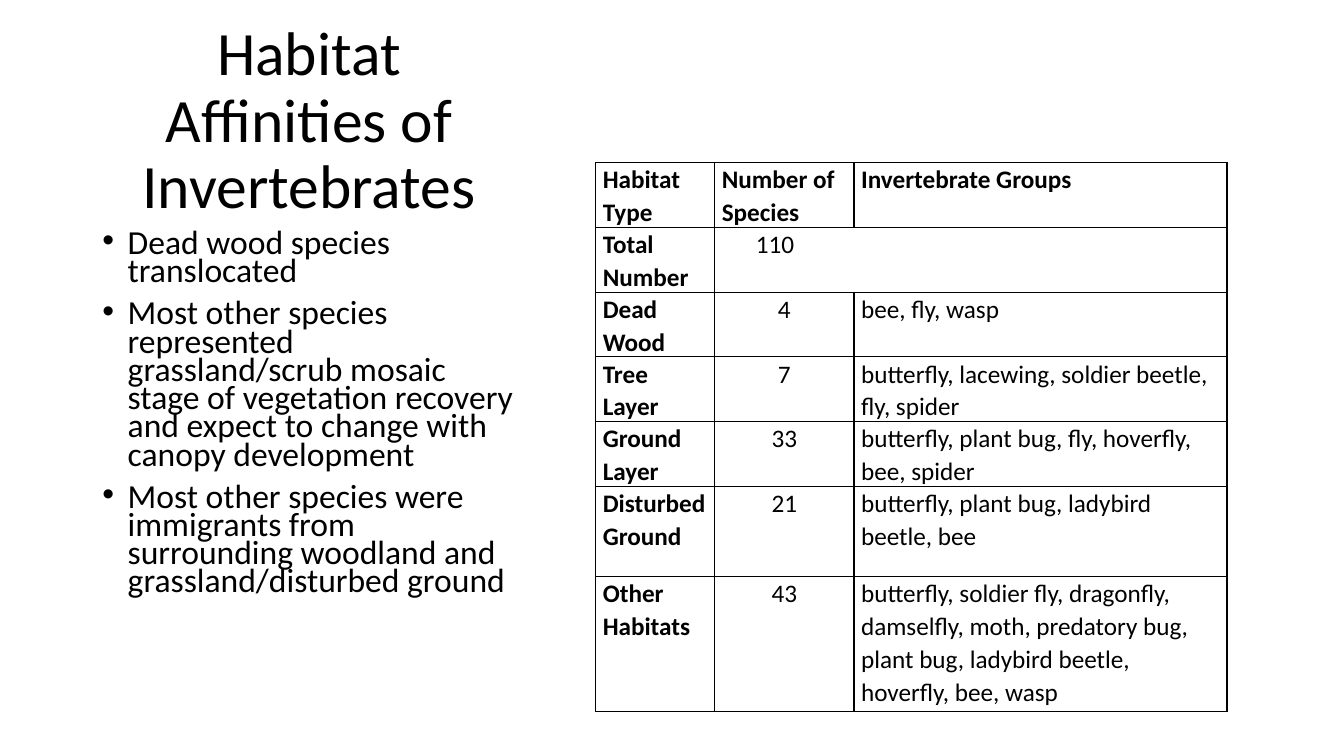
from lxml.etree import SubElement
from pptx import Presentation
from pptx.dml.color import RGBColor
from pptx.enum.text import MSO_ANCHOR, PP_ALIGN
from pptx.oxml.ns import qn
from pptx.util import Cm, Pt

COLORS = {"text": "000000", "border": "000000"}
TITLE = {"size": Pt(44), "bold": False}
BULLET = {"size": Pt(24), "bold": False}
HEADING = {"size": Pt(18), "bold": True}
ENTRY = {"size": Pt(18), "bold": False}


def write(p, text, font, layout):
    r = p.add_run()
    r.text = text
    r.font.name = "Calibri"
    r.font.color.rgb = RGBColor.from_string(COLORS["text"])
    for name, value in font.items():
        setattr(r.font, name, value)
    for name, value in layout.items():
        setattr(p, name, value)


def add_borders(cell):
    tcPr = cell._tc.get_or_add_tcPr()
    for i, side in enumerate(("lnL", "lnR", "lnT", "lnB")):
        ln = tcPr.makeelement(qn(f"a:{side}"), {"w": str(Pt(1))})
        fill = SubElement(ln, qn("a:solidFill"))
        SubElement(fill, qn("a:srgbClr"), val=COLORS["border"])
        tcPr.insert(i, ln)


prs = Presentation()
prs.slide_width, prs.slide_height = Cm(33.87), Cm(19.05)
s = prs.slides.add_slide(prs.slide_layouts[6])

tf = s.shapes.add_textbox(Cm(2.33), Cm(1.27), Cm(10.92), Cm(4.45)).text_frame
tf.word_wrap = True
tf.vertical_anchor = MSO_ANCHOR.BOTTOM
write(tf.paragraphs[0], "Habitat Affinities of Invertebrates", TITLE,
      {"alignment": PP_ALIGN.CENTER, "line_spacing": 0.9})

rows = [
    ("Habitat Type", "Number of Species", "Invertebrate Groups"),
    ("Total Number", "110", ""),
    ("Dead Wood", "4", "bee, fly, wasp"),
    ("Tree Layer", "7", "butterfly, lacewing, soldier beetle, fly, spider"),
    ("Ground Layer", "33", "butterfly, plant bug, fly, hoverfly, bee, spider"),
    ("Disturbed Ground", "21", "butterfly, plant bug, ladybird beetle, bee"),
    ("Other Habitats", "43", "butterfly, soldier fly, dragonfly, damselfly, moth, "
     "predatory bug, plant bug, ladybird beetle, hoverfly, bee, wasp"),
]
widths = [3, 3.51, 9.4]
heights = [1.14] * 5 + [2.27, 3.41]
margins = {"margin_left": Cm(0.18), "margin_right": Cm(0.18),
           "margin_top": 0, "margin_bottom": 0}

table = s.shapes.add_table(len(rows), len(widths), Cm(15.01), Cm(4.1),
                           Cm(sum(widths)), Cm(sum(heights))).table
table.first_row = table.horz_banding = False
for column, width in zip(table.columns, widths):
    column.width = Cm(width)
for row, height in zip(table.rows, heights):
    row.height = Cm(height)

for i, values in enumerate(rows):
    for j, value in enumerate(values):
        cell = table.cell(i, j)
        for name, margin in margins.items():
            setattr(cell, name, margin)
        cell.fill.background()
        add_borders(cell)
        if value:
            centred = j == 1 and i > 1
            write(cell.text_frame.paragraphs[0], value,
                  HEADING if i == 0 or j == 0 else ENTRY,
                  {"alignment": PP_ALIGN.CENTER if centred else PP_ALIGN.LEFT,
                   "line_spacing": 1.07})

total = table.cell(1, 1)
total.merge(table.cell(1, 2))
total.margin_left = Cm(1.04)

findings = [
    "Dead wood species translocated",
    "Most other species represented grassland/scrub mosaic stage of vegetation "
    "recovery and expect to change with canopy development",
    "Most other species were immigrants from surrounding woodland and "
    "grassland/disturbed ground",
]
tf = s.shapes.add_textbox(Cm(2.33), Cm(5.72), Cm(10.92), Cm(10.59)).text_frame
tf.word_wrap = True
for i, finding in enumerate(findings):
    p = tf.add_paragraph() if i else tf.paragraphs[0]
    write(p, finding, BULLET, {"line_spacing": 0.7, "space_before": Pt(10)})
    pPr = p._p.get_or_add_pPr()
    pPr.set("marL", str(Cm(0.64)))
    pPr.set("indent", str(-Cm(0.64)))
    SubElement(pPr, qn("a:buFont"), typeface="Arial")
    SubElement(pPr, qn("a:buChar"), char="•")

prs.save("out.pptx")
